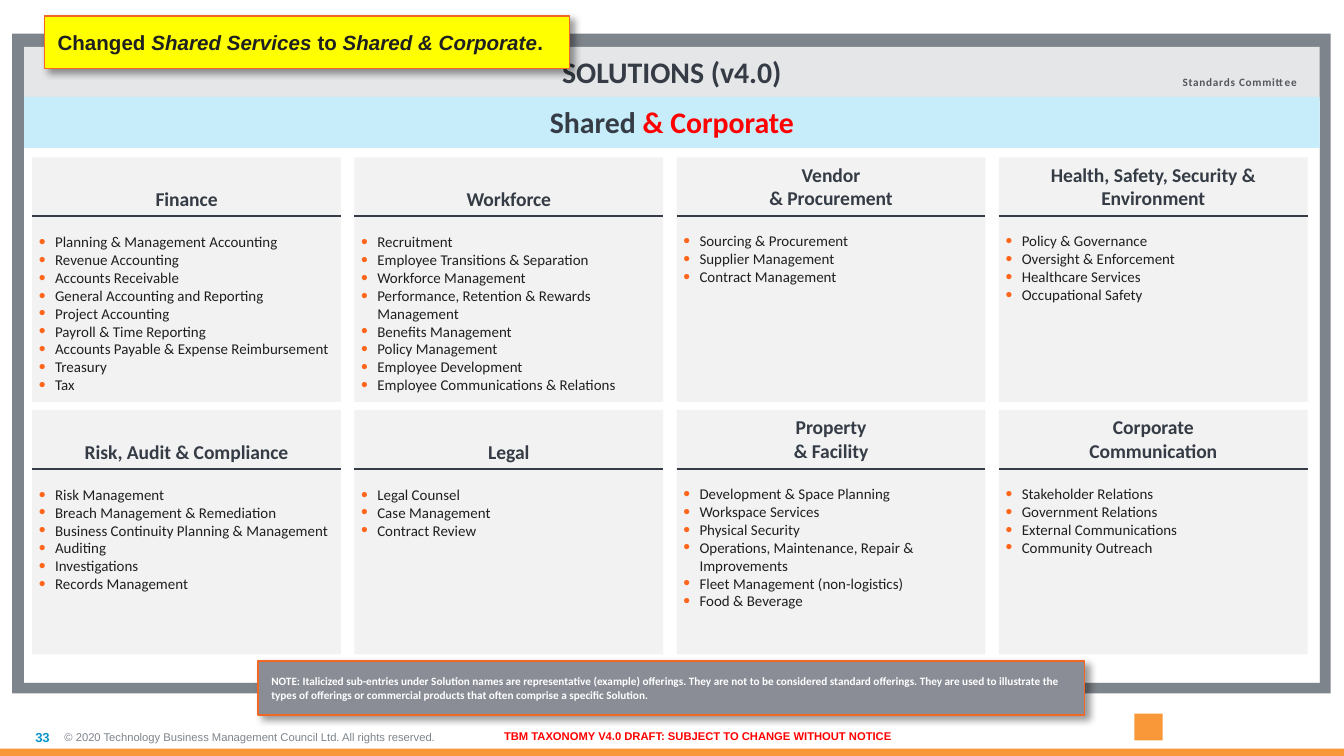
from lxml.etree import SubElement
from pptx import Presentation
from pptx.dml.color import RGBColor
from pptx.enum.shapes import MSO_CONNECTOR, MSO_SHAPE
from pptx.enum.text import MSO_ANCHOR as Anchor, PP_ALIGN as Align
from pptx.oxml.ns import qn
from pptx.util import Inches, Pt

COLORS = {
    "ink": "1E1F21", "navy": "353C45", "white": "FFFFFF", "red": "FF0000",
    "frame": "7E848B", "title": "E5E6E8", "band": "C7EDFB", "card": "F2F2F2",
    "committee": "53565C", "note": "8A8D95", "yellow": "FFFF00",
    "border": "F26724", "bullet": "FF661C", "footer": "F89838",
    "number": "0D96C9", "shadow": "000000",
}

# Card grid, in inches
COLS, LEFT, TOP, AREA_W = 4, 0.24, 1.17, 9.49
GAP_X, GAP_Y, CARD_H = 0.1, 0.06, 1.82
CARD_W = (AREA_W - (COLS - 1) * GAP_X) / COLS
RULE_Y, PAD = 0.44, 0.04
HEAD_LINE, HEAD_CHARS = 0.18, 30  # line height, characters that fit a line

CARDS = [
    ("Finance", [
        "Planning & Management Accounting", "Revenue Accounting",
        "Accounts Receivable", "General Accounting and Reporting",
        "Project Accounting", "Payroll & Time Reporting",
        "Accounts Payable & Expense Reimbursement", "Treasury", "Tax"]),
    ("Workforce", [
        "Recruitment", "Employee Transitions & Separation",
        "Workforce Management", "Performance, Retention & Rewards Management",
        "Benefits Management", "Policy Management", "Employee Development",
        "Employee Communications & Relations"]),
    ("Vendor\n& Procurement", [
        "Sourcing & Procurement", "Supplier Management",
        "Contract Management"]),
    ("Health, Safety, Security & Environment", [
        "Policy & Governance", "Oversight & Enforcement",
        "Healthcare Services", "Occupational Safety"]),
    ("Risk, Audit & Compliance", [
        "Risk Management", "Breach Management & Remediation",
        "Business Continuity Planning & Management", "Auditing",
        "Investigations", "Records Management"]),
    ("Legal", ["Legal Counsel", "Case Management", "Contract Review"]),
    ("Property\n& Facility", [
        "Development & Space Planning", "Workspace Services",
        "Physical Security", "Operations, Maintenance, Repair & Improvements",
        "Fleet Management (non-logistics)", "Food & Beverage"]),
    ("Corporate\nCommunication", [
        "Stakeholder Relations", "Government Relations",
        "External Communications", "Community Outreach"]),
]

NOTE = ("NOTE: Italicized sub-entries under Solution names are representative "
        "(example) offerings. They are not to be considered standard "
        "offerings. They are used to illustrate the types of offerings or "
        "commercial products that often comprise a specific Solution.")


def rgb(name):
    return RGBColor.from_string(COLORS[name])


def add_run(p, text, size, color, font="Calibri", bold=True, italic=False):
    """Add text in one style; a newline becomes a line break."""
    for i, line in enumerate(text.split("\n")):
        if i:
            p.add_line_break()
        r = p.add_run()
        r.text = line
        r.font.name, r.font.size = font, Pt(size)
        r.font.bold, r.font.italic = bold, italic
        r.font.color.rgb = rgb(color)
    return r


def set_frame(sp, inset=(0.1, 0.05), anchor=Anchor.TOP, wrap=True,
              align=Align.LEFT):
    """Set up the text frame and return its first paragraph."""
    tf = sp.text_frame
    tf.word_wrap, tf.vertical_anchor = wrap, anchor
    tf.margin_left = tf.margin_right = Inches(inset[0])
    tf.margin_top = tf.margin_bottom = Inches(inset[1])
    p = tf.paragraphs[0]
    p.alignment = align
    return p


def add_rect(s, x, y, w, h, fill):
    sp = s.shapes.add_shape(MSO_SHAPE.RECTANGLE, Inches(x), Inches(y),
                            Inches(w), Inches(h))
    sp.shadow.inherit = False
    sp.fill.solid()
    sp.fill.fore_color.rgb = rgb(fill)
    sp.line.fill.background()
    return sp


def add_label(s, x, y, w, h, text, size, color, font="Arial", bold=True,
              anchor=Anchor.MIDDLE, wrap=True, align=Align.LEFT):
    sp = s.shapes.add_textbox(Inches(x), Inches(y), Inches(w), Inches(h))
    p = set_frame(sp, (0, 0), anchor, wrap, align)
    return add_run(p, text, size, color, font, bold)


def add_callout(s, x, y, w, h, fill):
    """Add a bordered box with a soft shadow and return its paragraph."""
    sp = add_rect(s, x, y, w, h, fill)
    sp.line.color.rgb = rgb("border")
    sp.line.width = Pt(0.75)
    effects = sp._element.spPr.find(qn("a:effectLst"))
    shadow = SubElement(effects, qn("a:outerShdw"), blurRad=str(Pt(4)),
                        dist=str(Pt(3)), dir="2700000", algn="tl",
                        rotWithShape="0")
    color = SubElement(shadow, qn("a:srgbClr"), val=COLORS["shadow"])
    SubElement(color, qn("a:alpha"), val="40000")
    return set_frame(sp, (0.1, 0.1), Anchor.MIDDLE)


def add_bullet(p):
    pPr = p._p.get_or_add_pPr()
    pPr.set("marL", str(Inches(0.13)))
    pPr.set("indent", str(Inches(-0.12)))
    color = SubElement(pPr, qn("a:buClr"))
    SubElement(color, qn("a:srgbClr"), val=COLORS["bullet"])
    SubElement(pPr, qn("a:buSzPct"), val="130000")
    SubElement(pPr, qn("a:buFont"), typeface="Arial")
    SubElement(pPr, qn("a:buChar"), char="•")


def add_rule(s, x, y, w):
    ln = s.shapes.add_connector(MSO_CONNECTOR.STRAIGHT, Inches(x), Inches(y),
                                Inches(x + w), Inches(y))
    ln.line.color.rgb = rgb("navy")
    ln.line.width = Pt(1)
    SubElement(ln._element.spPr, qn("a:effectLst"))


def add_card(s, index, heading, items):
    row, col = divmod(index, COLS)
    x = LEFT + col * (CARD_W + GAP_X)
    y = TOP + row * (CARD_H + GAP_Y)
    sp = add_rect(s, x, y, CARD_W, CARD_H, "card")
    p = set_frame(sp, (PAD, PAD), align=Align.CENTER)
    if "\n" not in heading and len(heading) < HEAD_CHARS:
        sp.text_frame.margin_top = Inches(PAD + HEAD_LINE)
    p.space_after = Pt(12)
    add_run(p, heading, 10.5, "navy")
    for item in items:
        p = sp.text_frame.add_paragraph()
        p.level, p.alignment = 1, Align.LEFT
        add_bullet(p)
        add_run(p, item, 8, "ink", bold=False)
    add_rule(s, x, y + RULE_Y, CARD_W)


def add_footer(s):
    add_label(s, 0.48, 5.34, 3.36, 0.29, "© 2020 Technology Business "
              "Management Council Ltd. All rights reserved.", 6, "frame",
              bold=False)
    add_label(s, 0, 5.34, 0.37, 0.29, "33", 7, "number", align=Align.RIGHT)
    add_rect(s, 8.44, 5.31, 0.21, 0.2, "footer")
    add_rect(s, 0, 5.57, 10, 0.06, "footer")
    add_label(s, 3.73, 5.43, 2.92, 0.1, "TBM TAXONOMY V4.0 DRAFT: SUBJECT TO "
              "CHANGE WITHOUT NOTICE", 6, "red", wrap=False,
              align=Align.CENTER)


def add_header(s):
    add_rect(s, 0.09, 0.25, 9.81, 4.91, "frame")
    title = add_rect(s, 0.18, 0.35, 9.64, 4.73, "title")
    add_run(set_frame(title, align=Align.CENTER), "SOLUTIONS (v4.0)", 16,
            "navy")
    add_rect(s, 0.18, 0.75, 9.64, 4.33, "white")
    r = add_label(s, 8.8, 0.56, 0.87, 0.1, "Standards Committee", 6,
                  "committee", "Calibri", anchor=Anchor.TOP, wrap=False)
    r._r.get_or_add_rPr().set("spc", "40")
    band = add_rect(s, 0.18, 0.72, 9.64, 0.38, "band")
    p = set_frame(band, align=Align.CENTER)
    add_run(p, "Shared ", 16, "navy")
    add_run(p, "& Corporate", 16, "red")


def main():
    prs = Presentation()
    prs.slide_width, prs.slide_height = Inches(10), Pt(405)
    s = prs.slides.add_slide(prs.slide_layouts[6])
    add_footer(s)
    add_header(s)
    p = add_callout(s, 0.33, 0.12, 3.91, 0.39, "yellow")
    for text, italic in [("Changed ", False), ("Shared Services ", True),
                         ("to ", False), ("Shared & Corporate", True),
                         (".", False)]:
        add_run(p, text, 11, "ink", "Arial", italic=italic)
    add_run(add_callout(s, 1.92, 4.92, 6.15, 0.4, "note"), NOTE, 6, "white")
    for i, (heading, items) in enumerate(CARDS):
        add_card(s, i, heading, items)
    prs.save("out.pptx")


if __name__ == "__main__":
    main()
